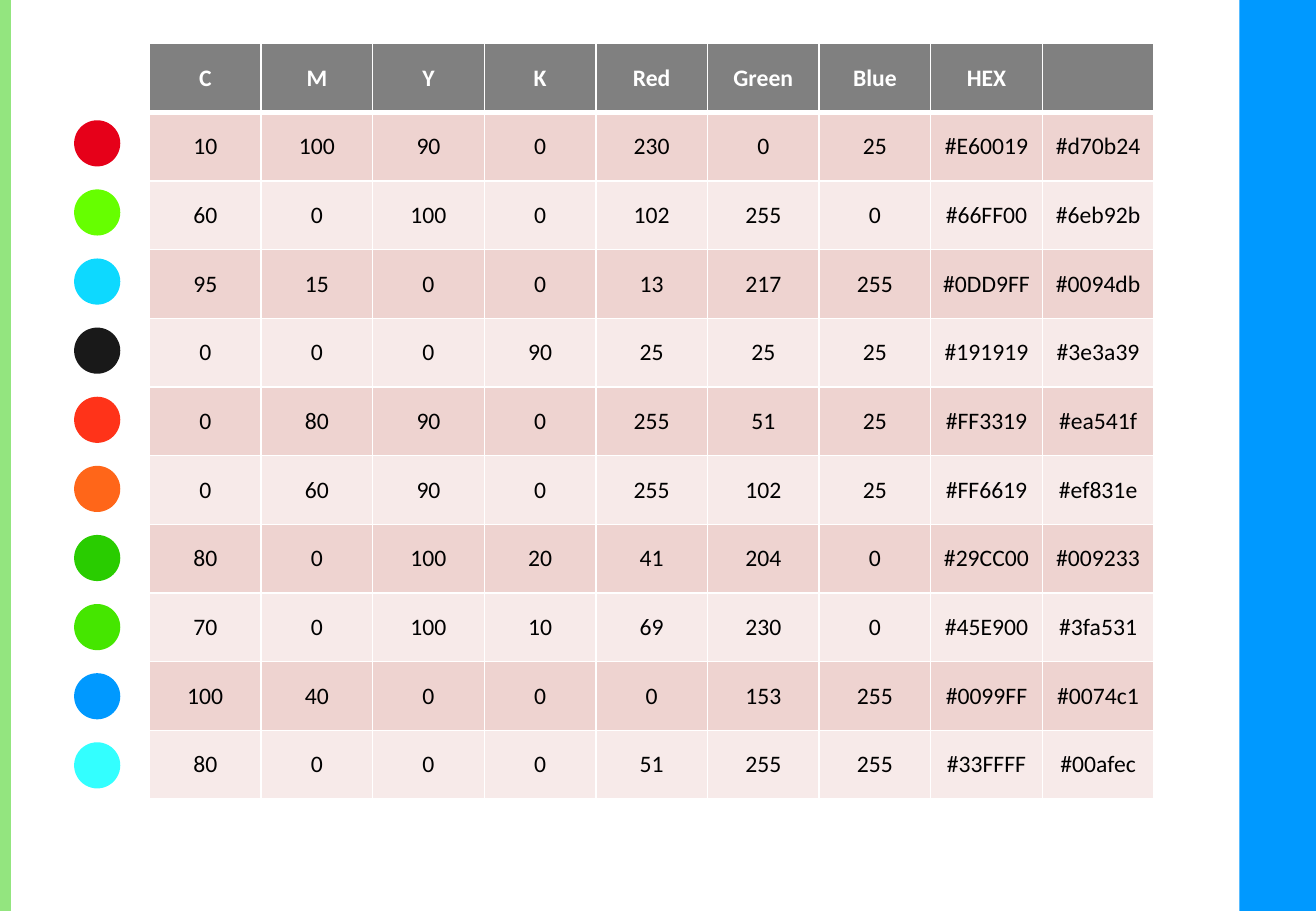
from lxml import etree
from pptx import Presentation
from pptx.dml.color import RGBColor
from pptx.enum.shapes import MSO_SHAPE
from pptx.enum.text import MSO_ANCHOR, PP_ALIGN
from pptx.oxml.ns import qn
from pptx.util import Inches, Pt

RECT, OVAL = MSO_SHAPE.RECTANGLE, MSO_SHAPE.OVAL
CENTER, MIDDLE = PP_ALIGN.CENTER, MSO_ANCHOR.MIDDLE

COLORS = {
    "blue": "0099FF",
    "green": "29CC00",
    "head": "808080",
    "dark": "EED3D0",
    "light": "F7EAE9",
    "white": "FFFFFF",
    "black": "000000",
}

HEADS = ["C", "M", "Y", "K", "Red", "Green", "Blue", "HEX", ""]
INKS = [
    (10, 100, 90, 0, 230, 0, 25, "#E60019", "#d70b24"),
    (60, 0, 100, 0, 102, 255, 0, "#66FF00", "#6eb92b"),
    (95, 15, 0, 0, 13, 217, 255, "#0DD9FF", "#0094db"),
    (0, 0, 0, 90, 25, 25, 25, "#191919", "#3e3a39"),
    (0, 80, 90, 0, 255, 51, 25, "#FF3319", "#ea541f"),
    (0, 60, 90, 0, 255, 102, 25, "#FF6619", "#ef831e"),
    (80, 0, 100, 20, 41, 204, 0, "#29CC00", "#009233"),
    (70, 0, 100, 10, 69, 230, 0, "#45E900", "#3fa531"),
    (100, 40, 0, 0, 0, 153, 255, "#0099FF", "#0074c1"),
    (80, 0, 0, 0, 51, 255, 255, "#33FFFF", "#00afec"),
]
RGB = slice(4, 7)  # Red, Green and Blue columns


def color(name):
    return RGBColor.from_string(COLORS[name])


def add_shape(slide, kind, box, fill, alpha=None):
    shape = slide.shapes.add_shape(kind, *map(Inches, box))
    shape.shadow.inherit = False
    shape.fill.solid()
    shape.fill.fore_color.rgb = fill
    shape.line.fill.background()
    if alpha is not None:
        tint = shape.fill._xPr.find(qn("a:solidFill"))[0]
        etree.SubElement(tint, qn("a:alpha"), val=str(alpha * 1000))


def set_edges(cell, widths):
    """Draw white borders; widths are points for left, right, top, bottom."""
    props = cell._tc.get_or_add_tcPr()
    for spot, (side, width) in enumerate(zip("LRTB", widths)):
        line = etree.Element(qn(f"a:ln{side}"), w=str(Pt(width)))
        fill = etree.SubElement(line, qn("a:solidFill"))
        etree.SubElement(fill, qn("a:srgbClr"), val=COLORS["white"])
        props.insert(spot, line)


def fill_cell(cell, text, fill, edges, font):
    cell.vertical_anchor = MIDDLE
    cell.fill.solid()
    cell.fill.fore_color.rgb = color(fill)
    set_edges(cell, edges)
    par = cell.text_frame.paragraphs[0]
    par.alignment = CENTER
    if text:
        run = par.add_run()
        run.text = text
        for name, value in font.items():
            setattr(run.font, name, value)
        run.font.color.rgb = color("white" if font["bold"] else "black")


def add_table(slide, rows, box):
    table = slide.shapes.add_table(len(rows), len(HEADS), *map(Inches, box)).table
    for r, row in enumerate(rows):
        fill = "head" if r == 0 else "dark" if r % 2 else "light"
        # A thick rule parts the header from the body
        edges = (1, 1, 3 if r == 1 else 1, 3 if r == 0 else 1)
        font = {"name": "Calibri", "size": Pt(14), "bold": r == 0}
        for c, value in enumerate(row):
            fill_cell(table.cell(r, c), str(value), fill, edges, font)


def main():
    prs = Presentation()
    prs.slide_width, prs.slide_height = Inches(10.83), Inches(7.5)
    slide = prs.slides.add_slide(prs.slide_layouts[6])

    # Side bands
    add_shape(slide, RECT, (10.2, 0, 0.63, 7.5), color("blue"))
    add_shape(slide, RECT, (0, 0, 0.09, 7.5), color("green"), alpha=50)

    # Colour values
    add_table(slide, [HEADS, *INKS], (1.23, 0.36, 8.27, 6.22))

    # One swatch beside each row
    for i, ink in enumerate(INKS):
        add_shape(slide, OVAL, (0.61, 0.99 + 0.569 * i, 0.38, 0.38), RGBColor(*ink[RGB]))

    prs.save("out.pptx")


if __name__ == "__main__":
    main()
